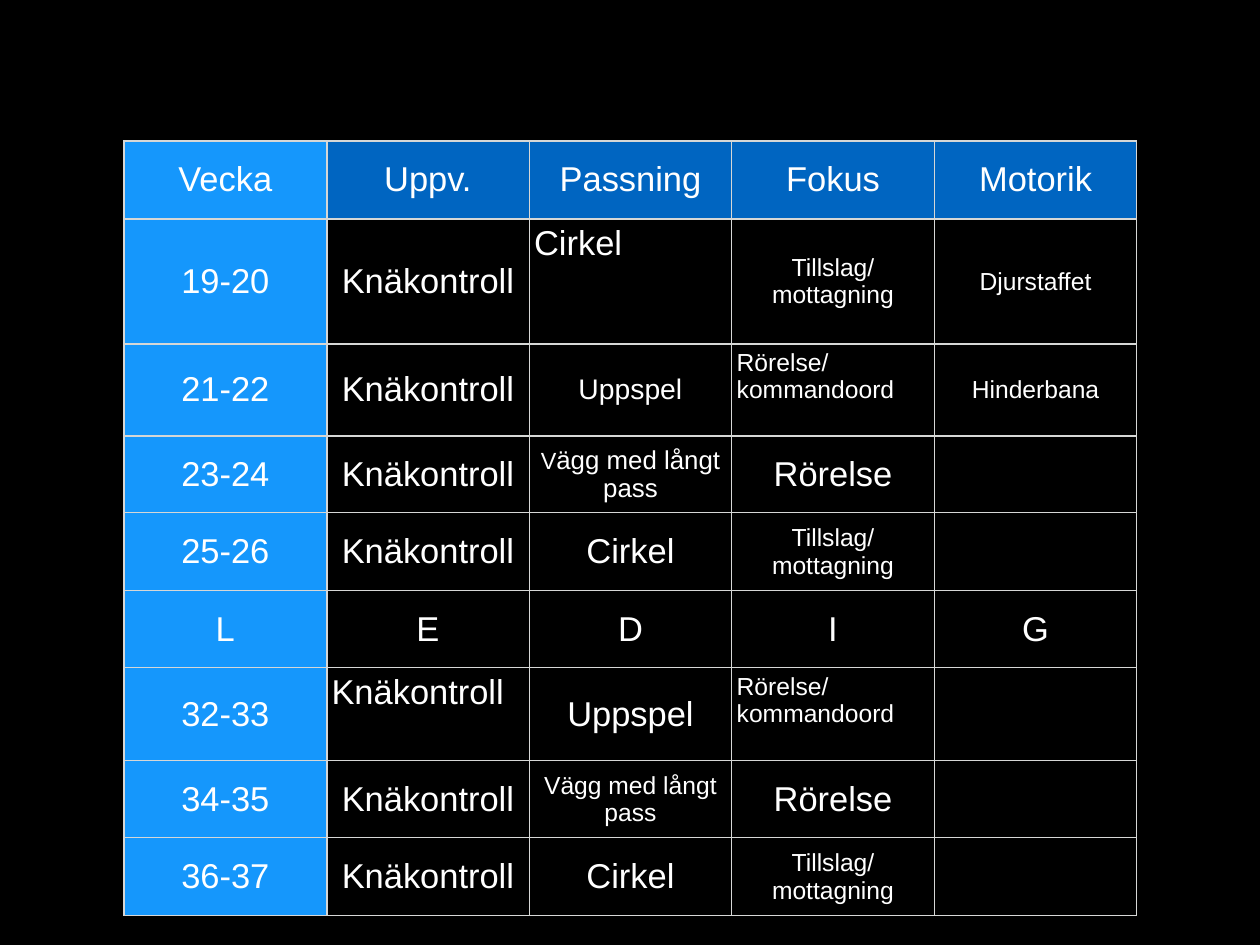
from dataclasses import dataclass
from lxml.etree import SubElement
from pptx import Presentation
from pptx.dml.color import RGBColor
from pptx.enum.text import MSO_ANCHOR, PP_ALIGN
from pptx.oxml.ns import qn
from pptx.util import Emu, Pt

SCALE = 10320  # EMU per px


def px(count):
    return Emu(count * SCALE)


@dataclass(frozen=True)
class Theme:
    font: str = "Arial"
    back: str = "000000"
    text: str = "FFFFFF"
    head: str = "0065C1"
    week: str = "1597FC"
    rule: str = "D6D7D6"
    large: int = 28
    medium: int = 23
    small: int = 20
    thin: int = 1
    thick: int = 2


@dataclass(frozen=True)
class Entry:
    """Cell content: runs of (text, size), centred or in the top left corner."""
    runs: tuple
    corner: bool = False


class Deck:
    def __init__(self, theme, width, height):
        self.theme = theme
        self.show = Presentation()
        self.show.slide_width, self.show.slide_height = px(width), px(height)
        self.slide = self.show.slides.add_slide(self.show.slide_layouts[6])
        fill = self.slide.background.fill
        fill.solid()
        fill.fore_color.rgb = RGBColor.from_string(theme.back)

    def table(self, left, top, width, heights, rows):
        frame = self.slide.shapes.add_table(
            len(rows), len(rows[0]), px(left), px(top), px(width), px(sum(heights)))
        grid = frame.table
        grid.first_row = grid.horz_banding = False
        for r, (height, row) in enumerate(zip(heights, rows)):
            grid.rows[r].height = px(height)
            for c, entry in enumerate(row):
                cell = grid.cell(r, c)
                self.label(cell, entry)
                self.paint(cell, r, c)
                self.border(cell, r, c)

    def label(self, cell, entry):
        cell.margin_left = cell.margin_right = px(5)
        cell.margin_top = cell.margin_bottom = px(5)
        cell.vertical_anchor = MSO_ANCHOR.TOP if entry.corner else MSO_ANCHOR.MIDDLE
        para = cell.text_frame.paragraphs[0]
        para.alignment = PP_ALIGN.LEFT if entry.corner else PP_ALIGN.CENTER
        para.font.name = self.theme.font
        para.font.color.rgb = RGBColor.from_string(self.theme.text)
        para.font.size = Pt(entry.runs[0][1])
        for text, size in entry.runs:
            run = para.add_run()
            run.text = text
            run.font.size = Pt(size)

    def paint(self, cell, r, c):
        if r and c:
            cell.fill.background()
        else:
            cell.fill.solid()
            tone = self.theme.head if c else self.theme.week
            cell.fill.fore_color.rgb = RGBColor.from_string(tone)

    def border(self, cell, r, c):
        """Rule all four sides, thicker below the head and beside the weeks."""
        heavy = {"L": c == 1, "R": c == 0, "T": r == 1, "B": r == 0}
        props = cell._tc.get_or_add_tcPr()
        for spot, (side, bold) in enumerate(heavy.items()):
            points = self.theme.thick if bold else self.theme.thin
            line = SubElement(props, qn(f"a:ln{side}"), w=str(Pt(points)))
            fill = SubElement(line, qn("a:solidFill"))
            SubElement(fill, qn("a:srgbClr"), val=self.theme.rule)
            props.insert(spot, line)


THEME = Theme()


def big(text, corner=False):
    return Entry(((text, THEME.large),), corner)


def small(text, corner=False):
    return Entry(((text, THEME.small),), corner)


def main():
    knee = big("Knäkontroll")
    circle = big("Cirkel")
    touch = small("Tillslag/ mottagning")
    move = big("Rörelse")
    order = small("Rörelse/ kommandoord", corner=True)
    none = Entry(())
    build = Entry((("Uppspel", THEME.medium),))
    wall = Entry((("V", 19), ("ägg med långt pass", 21)))
    none = big("")
    rows = [
        [big(name) for name in ("Vecka", "Uppv.", "Passning", "Fokus", "Motorik")],
        [big("19-20"), knee, big("Cirkel", corner=True), touch, small("Djurstaffet")],
        [big("21-22"), knee, build, order, small("Hinderbana")],
        [big("23-24"), knee, wall, move, none],
        [big("25-26"), knee, circle, touch, none],
        [big(letter) for letter in "LEDIG"],
        [big("32-33"), big("Knäkontroll", corner=True), big("Uppspel"), order, none],
        [big("34-35"), knee, small("Vägg med långt pass"), move, none],
        [big("36-37"), knee, circle, small("Tillslag/mottagning"), none],
    ]
    heights = [78, 125, 92, 77, 78, 77, 93, 77, 78]
    deck = Deck(THEME, 1260, 945)
    deck.table(124, 141, 1013, heights, rows)
    deck.show.save("out.pptx")


if __name__ == "__main__":
    main()
